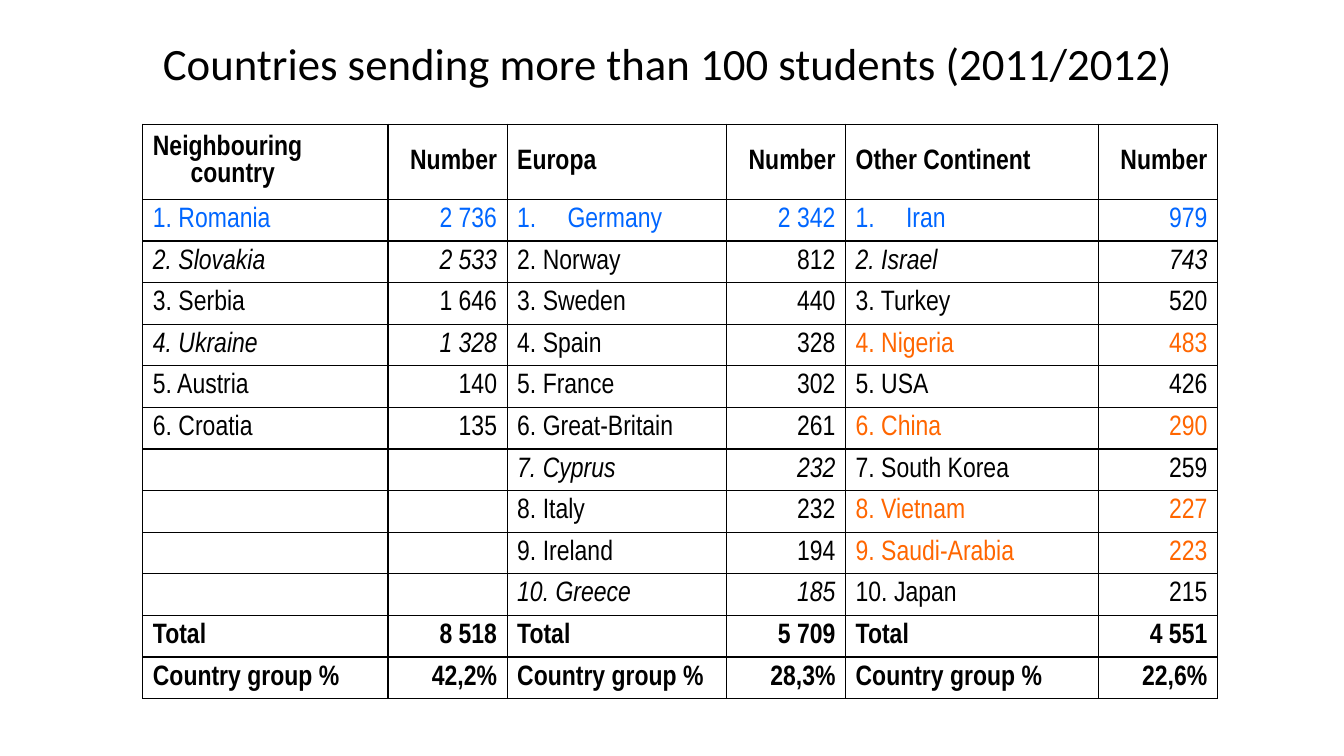
"""Build a slide with a table of the countries sending more than 100 students."""
from dataclasses import dataclass

from lxml.etree import SubElement
from pptx import Presentation
from pptx.dml.color import RGBColor
from pptx.enum.text import MSO_ANCHOR as Anchor, PP_ALIGN as Align
from pptx.oxml.ns import qn
from pptx.slide import Slide
from pptx.table import Table, _Cell as Cell
from pptx.text.text import Font
from pptx.util import Cm, Pt

BLACK, BLUE, ORANGE = "000000", "0066FF", "FF6600"
LEFT, WIDTH = Cm(3.6), Cm(27.08)
NUMBER_WIDTH = Cm(3)
HEADER_HEIGHT, ROW_HEIGHT = Cm(1.65), Cm(1.02)
LIST_ROWS = 10


@dataclass(frozen=True)
class Style:
    color: str = BLACK
    bold: bool = False
    italic: bool = False


PLAIN = Style()
BOLD = Style(bold=True)
ITALIC = Style(italic=True)
LEADER = Style(color=BLUE)
HIGHLIGHT = Style(color=ORANGE)


@dataclass(frozen=True)
class Country:
    name: str
    students: str
    style: Style = PLAIN


@dataclass(frozen=True)
class Group:
    heading: str
    name_width: Cm
    countries: list[Country]
    total: str
    share: str
    auto_numbered_leader: bool = True


GROUPS = [
    Group("Neighbouring country", Cm(6.18), [
        Country("Romania", "2 736", LEADER),
        Country("Slovakia", "2 533", ITALIC),
        Country("Serbia", "1 646"),
        Country("Ukraine", "1 328", ITALIC),
        Country("Austria", "140"),
        Country("Croatia", "135"),
    ], "8 518", "42,2%", auto_numbered_leader=False),
    Group("Europa", Cm(5.53), [
        Country("Germany", "2 342", LEADER),
        Country("Norway", "812"),
        Country("Sweden", "440"),
        Country("Spain", "328"),
        Country("France", "302"),
        Country("Great-Britain", "261"),
        Country("Cyprus", "232", ITALIC),
        Country("Italy", "232"),
        Country("Ireland", "194"),
        Country("Greece", "185", ITALIC),
    ], "5 709", "28,3%"),
    Group("Other Continent", Cm(6.37), [
        Country("Iran", "979", LEADER),
        Country("Israel", "743", ITALIC),
        Country("Turkey", "520"),
        Country("Nigeria", "483", HIGHLIGHT),
        Country("USA", "426"),
        Country("China", "290", HIGHLIGHT),
        Country("South Korea", "259"),
        Country("Vietnam", "227", HIGHLIGHT),
        Country("Saudi-Arabia", "223", HIGHLIGHT),
        Country("Japan", "215"),
    ], "4 551", "22,6%"),
]


def rgb(color: str) -> RGBColor:
    return RGBColor.from_string(color)


def set_font(font: Font, name: str, size: int, style: Style) -> None:
    font.name, font.size = name, Pt(size)
    font.bold, font.italic = style.bold, style.italic
    font.color.rgb = rgb(style.color)


def add_title(slide: Slide, text: str) -> None:
    frame = slide.shapes.add_textbox(LEFT, Cm(0.61), WIDTH, Cm(2.11)).text_frame
    frame.word_wrap = True
    frame.vertical_anchor = Anchor.MIDDLE
    paragraph = frame.paragraphs[0]
    paragraph.text = text
    paragraph.line_spacing = 0.9
    set_font(paragraph.font, "Calibri", 32, PLAIN)


def format_cell(cell: Cell) -> None:
    cell.vertical_anchor = Anchor.MIDDLE
    cell.margin_top = cell.margin_bottom = Cm(0.1)
    properties = cell._tc.get_or_add_tcPr()
    for side in ("a:lnL", "a:lnR", "a:lnT", "a:lnB"):
        line = SubElement(properties, qn(side), w=str(Pt(1)))
        fill = SubElement(line, qn("a:solidFill"))
        SubElement(fill, qn("a:srgbClr"), val=BLACK)
    cell.fill.background()


def write_cell(cell: Cell, text: str, style: Style, align: Align = Align.LEFT,
               auto_numbered: bool = False) -> None:
    paragraph = cell.text_frame.paragraphs[0]
    run = paragraph.add_run()
    run.text = text
    set_font(run.font, "Arial Narrow", 20, style)
    paragraph.alignment = align
    indent = Cm(1.27 if auto_numbered else 0.95)
    properties = paragraph._p.get_or_add_pPr()
    properties.set("marL", str(indent))
    properties.set("indent", str(-indent))
    if auto_numbered:
        SubElement(properties, qn("a:buAutoNum"), type="arabicPeriod")


def write_group(table: Table, column: int, group: Group) -> None:
    table.columns[column].width = group.name_width
    table.columns[column + 1].width = NUMBER_WIDTH

    def write_row(row: int, label: str, value: str, style: Style,
                  auto_numbered: bool = False) -> None:
        write_cell(table.cell(row, column), label, style, auto_numbered=auto_numbered)
        write_cell(table.cell(row, column + 1), value, style, Align.RIGHT)

    write_row(0, group.heading, "Number", BOLD)
    for rank, country in enumerate(group.countries, start=1):
        auto_numbered = rank == 1 and group.auto_numbered_leader
        label = country.name if auto_numbered else f"{rank}. {country.name}"
        write_row(rank, label, country.students, country.style, auto_numbered)
    write_row(LIST_ROWS + 1, "Total", group.total, BOLD)
    write_row(LIST_ROWS + 2, "Country group %", group.share, BOLD)


def add_student_table(slide: Slide) -> None:
    row_count = LIST_ROWS + 3
    height = HEADER_HEIGHT + ROW_HEIGHT * (row_count - 1)
    table = slide.shapes.add_table(
        row_count, 2 * len(GROUPS), LEFT, Cm(3.13), WIDTH, height).table
    table.first_row = table.horz_banding = False
    for row in table.rows:
        row.height = ROW_HEIGHT
    table.rows[0].height = HEADER_HEIGHT
    for cell in table.iter_cells():
        format_cell(cell)
    for index, group in enumerate(GROUPS):
        write_group(table, 2 * index, group)


def main() -> None:
    presentation = Presentation()
    presentation.slide_width, presentation.slide_height = Cm(33.87), Cm(19.05)
    slide = presentation.slides.add_slide(presentation.slide_layouts[6])
    add_title(slide, " Countries sending more than 100 students (2011/2012)")
    add_student_table(slide)
    presentation.save("out.pptx")


if __name__ == "__main__":
    main()
